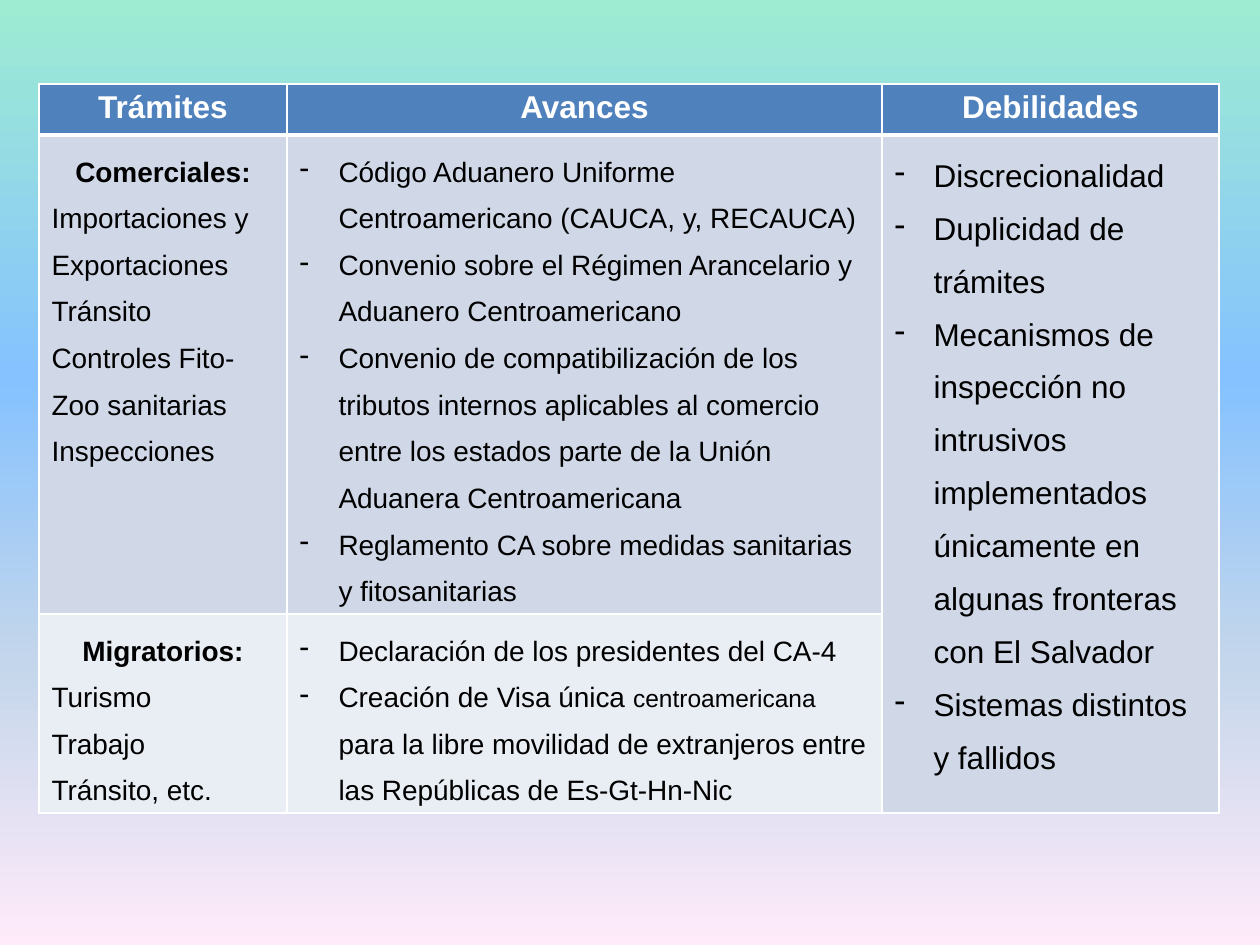
from lxml.etree import SubElement
from pptx import Presentation
from pptx.dml.color import RGBColor
from pptx.enum.text import PP_ALIGN
from pptx.oxml.ns import qn
from pptx.util import Emu, Pt

PX = 914400 / 126
COLORS = {
    "white": "FFFFFF", "black": "000000", "header": "4F81BD",
    "band_dark": "D0D8E8", "band_light": "E9EDF4",
}
SKY = [(0, "9EECD2"), (40, "85C2FF"), (70, "C4D6EB"), (100, "FFEBFA")]
COLS = [248, 595, 337]
ROWS = [51, 479, 199]
INDENT = 39

HEADERS = ["Trámites", "Avances", "Debilidades"]
COMMERCIAL = ["Comerciales:", "Importaciones y Exportaciones", "Tránsito",
              "Controles Fito-Zoo sanitarias", "Inspecciones"]
MIGRATION = ["Migratorios:", "Turismo", "Trabajo", "Tránsito, etc."]
TRADE_PROGRESS = [
    "Código Aduanero Uniforme Centroamericano (CAUCA, y, RECAUCA)",
    "Convenio sobre el Régimen Arancelario y Aduanero Centroamericano",
    "Convenio de compatibilización de los tributos internos aplicables al comercio "
    "entre los estados parte de la Unión Aduanera Centroamericana",
    "Reglamento CA sobre medidas sanitarias y fitosanitarias",
]
MIGRATION_PROGRESS = [
    "Declaración de los presidentes del CA-4",
    [("Creación de Visa única ", 16), ("centroamericana", 14),
     (" para la libre movilidad de extranjeros entre las Repúblicas de Es-Gt-Hn-Nic", 16)],
]
WEAKNESSES = [
    "Discrecionalidad",
    "Duplicidad de trámites",
    "Mecanismos de inspección no intrusivos implementados únicamente en algunas "
    "fronteras con El Salvador",
    "Sistemas distintos y fallidos",
]


def px(n):
    """Turn whole pixels into EMU."""
    return Emu(round(n * PX))


def paint_background(s):
    """Fill the slide with the vertical four-stop gradient."""
    fill = s.background.fill
    fill.gradient()
    fill.gradient_angle = 270
    stops = next(s.element.iter(qn("a:gsLst")))
    for gs in list(stops):
        stops.remove(gs)
    for pos, color in SKY:
        gs = SubElement(stops, qn("a:gs"), pos=str(pos * 1000))
        SubElement(gs, qn("a:srgbClr"), val=color)


def style_cell(cell, fill, top=1, bottom=1):
    """Give a cell white borders, in points, and a solid fill."""
    tcPr = cell._tc.get_or_add_tcPr()
    for side, width in (("L", 1), ("R", 1), ("T", top), ("B", bottom)):
        ln = SubElement(tcPr, qn(f"a:ln{side}"), w=str(Pt(width)))
        solid = SubElement(ln, qn("a:solidFill"))
        SubElement(solid, qn("a:srgbClr"), val=COLORS["white"])
    cell.fill.solid()
    cell.fill.fore_color.rgb = RGBColor.from_string(COLORS[fill])


def add_runs(p, content, size, color="black", bold=False):
    """Add a string, or a list of (text, size) pairs, as runs."""
    parts = [(content, size)] if isinstance(content, str) else content
    for text, pt in parts:
        r = p.add_run()
        r.text = text
        r.font.name = "Arial"
        r.font.size = Pt(pt)
        r.font.bold = bold
        r.font.color.rgb = RGBColor.from_string(COLORS[color])


def paragraphs(cell, items):
    """Yield one paragraph of the cell with each item."""
    tf = cell.text_frame
    for i, item in enumerate(items):
        yield (tf.add_paragraph() if i else tf.paragraphs[0]), item


def write_header(cell, text):
    """Write a centred column heading."""
    p = cell.text_frame.paragraphs[0]
    p.alignment = PP_ALIGN.CENTER
    add_runs(p, text, 18, "white", True)


def write_topic(cell, items):
    """Write a bold centred heading followed by plain lines."""
    for p, item in paragraphs(cell, items):
        heading = item == items[0]
        p.alignment = PP_ALIGN.CENTER if heading else PP_ALIGN.LEFT
        p.line_spacing = 1.5
        add_runs(p, item, 16, bold=heading)


def write_bullets(cell, items, size=16):
    """Write a list with hanging dashes."""
    for p, item in paragraphs(cell, items):
        p.line_spacing = 1.5
        pPr = p._p.get_or_add_pPr()
        pPr.set("marL", str(px(INDENT)))
        pPr.set("indent", str(-px(INDENT)))
        SubElement(pPr, qn("a:buChar"), char="-")
        add_runs(p, item, size)


def add_procedures_table(s, x, y):
    """Place the table of procedures, progress and weaknesses."""
    table = s.shapes.add_table(len(ROWS), len(COLS), px(x), px(y),
                               px(sum(COLS)), px(sum(ROWS))).table
    for col, width in zip(table.columns, COLS):
        col.width = px(width)
    for row, height in zip(table.rows, ROWS):
        row.height = px(height)
    for c, text in enumerate(HEADERS):
        style_cell(table.cell(0, c), "header", bottom=3)
        style_cell(table.cell(1, c), "band_dark", top=3)
        style_cell(table.cell(2, c), "band_light" if c < 2 else "band_dark")
        write_header(table.cell(0, c), text)
    table.cell(1, 2).merge(table.cell(2, 2))
    write_topic(table.cell(1, 0), COMMERCIAL)
    write_topic(table.cell(2, 0), MIGRATION)
    write_bullets(table.cell(1, 1), TRADE_PROGRESS)
    write_bullets(table.cell(2, 1), MIGRATION_PROGRESS)
    write_bullets(table.cell(1, 2), WEAKNESSES, 18)


def main():
    """Build and save the slide."""
    prs = Presentation()
    prs.slide_width, prs.slide_height = px(1260), px(945)
    s = prs.slides.add_slide(prs.slide_layouts[6])
    paint_background(s)
    add_procedures_table(s, 39, 84)
    prs.save("out.pptx")


if __name__ == "__main__":
    main()
